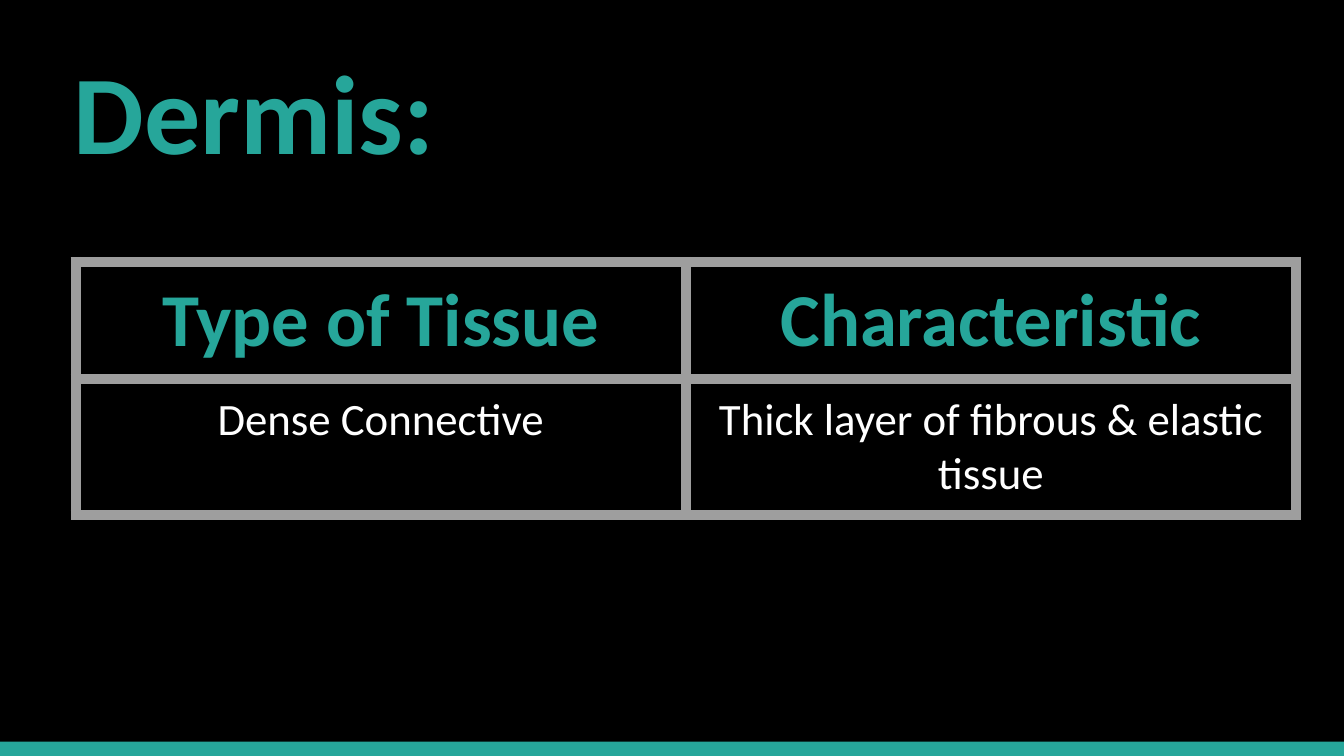
from lxml.etree import SubElement
from pptx import Presentation
from pptx.dml.color import RGBColor
from pptx.enum.shapes import MSO_SHAPE as Shape
from pptx.enum.text import MSO_ANCHOR as Anchor, MSO_AUTO_SIZE as AutoSize, PP_ALIGN as Align
from pptx.oxml import parse_xml
from pptx.oxml.ns import nsdecls, qn
from pptx.util import Cm, Pt

WIDTH, HEIGHT = 25.4, 14.29
TEAL, WHITE, BLACK, GREY = "26A69A", "FFFFFF", "000000", "9E9E9E"


def paint(color_format, value):
    color_format.rgb = RGBColor.from_string(value)


class TissueSlide:
    font = "Calibri"
    inset = Cm(0.25)
    border = Pt(6)

    def __init__(self, deck):
        self.slide = deck.slides.add_slide(deck.slide_layouts[5])
        backdrop = self.slide.background.fill
        backdrop.solid()
        paint(backdrop.fore_color, BLACK)

    def text(self, holder, line, wording, size, color, bold, align):
        holder.margin_left = holder.margin_right = self.inset
        holder.margin_top = holder.margin_bottom = self.inset
        holder.vertical_anchor = Anchor.TOP
        line.alignment = align
        run = line.add_run()
        run.text = wording
        run.font.name = self.font
        run.font.size = Pt(size)
        run.font.bold = bold
        paint(run.font.color, color)

    def title(self, wording, left, top, width, height):
        heading = self.slide.shapes.title
        heading.left, heading.top = Cm(left), Cm(top)
        heading.width, heading.height = Cm(width), Cm(height)
        frame = heading.text_frame
        frame.word_wrap = True
        frame.auto_size = AutoSize.NONE
        self.text(frame, frame.paragraphs[0], wording, 60, TEAL, True, Align.LEFT)

    def bar(self, left, top, width, height):
        strip = self.slide.shapes.add_shape(Shape.RECTANGLE, Cm(left), Cm(top), Cm(width), Cm(height))
        strip.shadow.inherit = False
        strip.fill.solid()
        paint(strip.fill.fore_color, TEAL)
        strip.line.fill.background()

    def outline(self, cell):
        properties = cell._tc.get_or_add_tcPr()
        for position, side in enumerate(("lnL", "lnR", "lnT", "lnB")):
            edge = parse_xml(f'<a:{side} {nsdecls("a")} w="{self.border}"/>')
            fill = SubElement(edge, qn("a:solidFill"))
            SubElement(fill, qn("a:srgbClr"), val=GREY)
            properties.insert(position, edge)

    def table(self, rows, left, top, column_width, row_height):
        columns = len(rows[0])
        grid = self.slide.shapes.add_table(
            len(rows), columns, Cm(left), Cm(top),
            Cm(columns * column_width), Cm(len(rows) * row_height),
        ).table
        grid.horz_banding = False
        for column in grid.columns:
            column.width = Cm(column_width)
        for r, wordings in enumerate(rows):
            grid.rows[r].height = Cm(row_height)
            size, color, bold = (40, TEAL, True) if r == 0 else (24, WHITE, False)
            for c, wording in enumerate(wordings):
                cell = grid.cell(r, c)
                cell.fill.background()
                self.outline(cell)
                line = cell.text_frame.paragraphs[0]
                self.text(cell, line, wording, size, color, bold, Align.CENTER)


def main():
    deck = Presentation()
    deck.slide_width, deck.slide_height = Cm(WIDTH), Cm(HEIGHT)
    dermis = TissueSlide(deck)
    dermis.bar(0, HEIGHT - 0.27, WIDTH, 0.27)
    dermis.table(
        [
            ("Type of Tissue", "Characteristic"),
            ("Dense Connective", "Thick layer of fibrous & elastic tissue"),
        ],
        1.43, 4.95, 11.53, 1.07,
    )
    dermis.title("Dermis:", 1.14, 0.56, 23.67, 2.67)
    deck.save("out.pptx")


if __name__ == "__main__":
    main()
